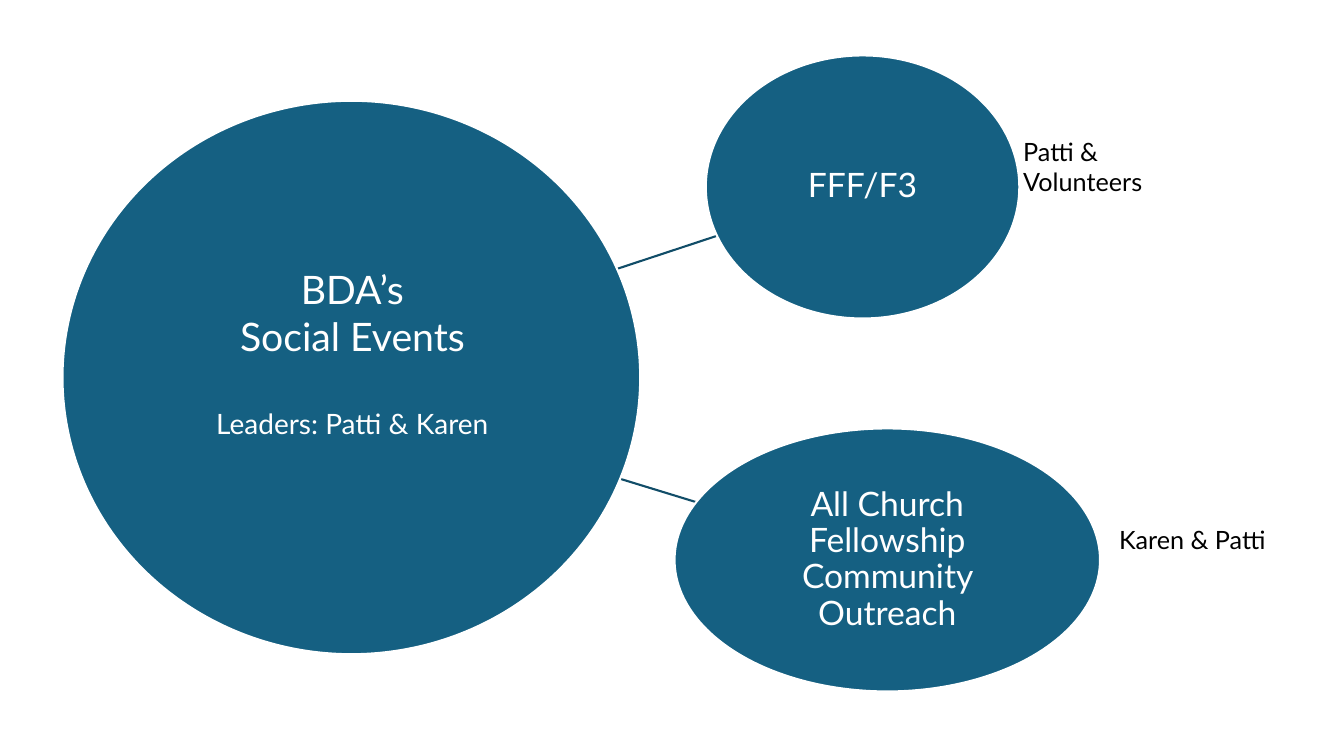
from pptx import Presentation
from pptx.dml.color import RGBColor
from pptx.enum.shapes import MSO_CONNECTOR, MSO_SHAPE
from pptx.enum.text import MSO_ANCHOR, PP_ALIGN
from pptx.oxml.ns import qn
from pptx.util import Inches, Pt
from lxml.etree import SubElement

BLUE = RGBColor(0x15, 0x60, 0x82)
DARK_BLUE = RGBColor(0x11, 0x4D, 0x68)
WHITE = RGBColor(0xFF, 0xFF, 0xFF)
BLACK = RGBColor(0, 0, 0)
FONT = "Lato"


def style_paragraph(p, text, size, color, align):
    p.text = text
    p.alignment = align
    p.font.name = FONT
    p.font.size = Pt(size)
    p.font.color.rgb = color


def add_link(slide, x1, y1, x2, y2):
    link = slide.shapes.add_connector(
        MSO_CONNECTOR.STRAIGHT, Inches(x1), Inches(y1), Inches(x2), Inches(y2))
    link.line.color.rgb = DARK_BLUE
    link.line.width = Pt(1.5)
    SubElement(link._element.spPr, qn("a:effectLst"))


def add_circle(slide, x, y, w, h, text=None):
    sp = slide.shapes.add_shape(
        MSO_SHAPE.OVAL, Inches(x), Inches(y), Inches(w), Inches(h))
    sp.shadow.inherit = False
    sp.fill.solid()
    sp.fill.fore_color.rgb = BLUE
    sp.line.color.rgb = WHITE
    sp.line.width = Pt(1.5)
    if text:
        tf = sp.text_frame
        tf.word_wrap = True
        tf.vertical_anchor = MSO_ANCHOR.MIDDLE
        tf.margin_left = tf.margin_right = Inches(0.02)
        tf.margin_top = tf.margin_bottom = Inches(0.02)
        p = tf.paragraphs[0]
        style_paragraph(p, text, 24, WHITE, PP_ALIGN.CENTER)
        p.line_spacing = 0.9


def add_text(slide, x, y, w, h, lines, color, align=PP_ALIGN.LEFT):
    box = slide.shapes.add_textbox(Inches(x), Inches(y), Inches(w), Inches(h))
    tf = box.text_frame
    tf.word_wrap = True
    for i, (text, size, gap) in enumerate(lines):
        p = tf.add_paragraph() if i else tf.paragraphs[0]
        style_paragraph(p, text, size, color, align)
        p.space_before = Pt(gap)


def main():
    prs = Presentation()
    prs.slide_width, prs.slide_height = Inches(13.33), Inches(7.5)
    slide = prs.slides.add_slide(prs.slide_layouts[6])

    add_link(slide, 4.39, 4.21, 6.9, 4.98)
    add_link(slide, 4.39, 3.24, 7.11, 2.34)

    add_circle(slide, 0.62, 1, 5.73, 5.49)
    add_circle(slide, 7, 0.55, 3.11, 2.61, "FFF/F3")
    add_circle(slide, 6.69, 4.25, 4.22, 2.61,
               "All Church Fellowship Community Outreach")

    add_text(slide, 1.37, 2.58, 4.25, 1.85,
             [("BDA’s", 28, 0), ("Social Events", 28, 0),
              ("Leaders: Patti & Karen", 20, 33.6)],
             WHITE, PP_ALIGN.CENTER)
    add_text(slide, 10.05, 1.3, 2.15, 0.4, [("Patti & Volunteers", 18, 0)], BLACK)
    add_text(slide, 11, 5.15, 2.15, 0.4, [("Karen & Patti", 18, 0)], BLACK)

    prs.save("out.pptx")


if __name__ == "__main__":
    main()
